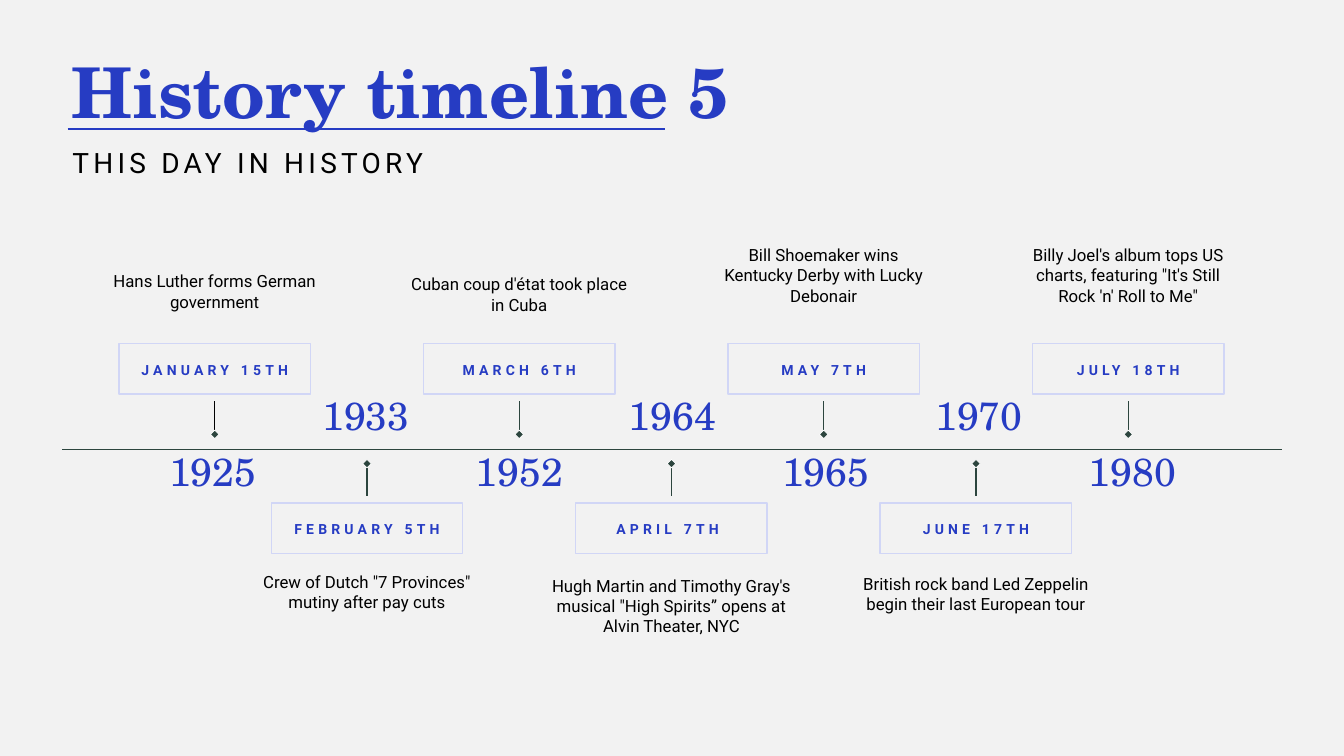
from pptx import Presentation
from pptx.dml.color import RGBColor
from pptx.enum.shapes import MSO_CONNECTOR as CONNECTOR, MSO_SHAPE as SHAPE
from pptx.enum.text import MSO_ANCHOR as ANCHOR, MSO_AUTO_SIZE as AUTO_SIZE, PP_ALIGN as ALIGN
from pptx.oxml.ns import qn
from pptx.util import Inches, Pt
from lxml import etree

BLUE = RGBColor(0x26, 0x3C, 0xC3)
PALE_BLUE = RGBColor(0xD1, 0xD6, 0xF6)
GREEN = RGBColor(0x2C, 0x45, 0x3E)
BLACK = RGBColor(0, 0, 0)
WHITE = RGBColor(0xFF, 0xFF, 0xFF)
GREY = RGBColor(0xF2, 0xF2, 0xF2)
SERIF, SANS = "TeX Gyre Schola", "Roboto"

TITLE = "History timeline 5"
SUBTITLE = "THIS DAY IN HISTORY"
EVENTS = [
    ("1925", "JANUARY 15TH", "Hans Luther forms German government", 2.57, 0.75),
    ("1933", "FEBRUARY 5TH", "Crew of Dutch \"7 Provinces\" mutiny after pay cuts", 5.55, 0.75),
    ("1952", "MARCH 6TH", "Cuban coup d'état took place in Cuba", 2.6, 0.75),
    ("1964", "APRIL 7TH ", "Hugh Martin and Timothy Gray's musical \"High Spirits” opens at Alvin Theater, NYC", 5.59, 0.99),
    ("1965", "MAY 7TH", "Bill Shoemaker wins Kentucky Derby with Lucky Debonair", 2.31, 0.99),
    ("1970", "JUNE 17TH", "British rock band Led Zeppelin begin their last European tour", 5.57, 0.75),
    ("1980", "JULY 18TH", "Billy Joel's album tops US charts, featuring \"It's Still Rock 'n' Roll to Me\"", 2.31, 0.99),
]
ABOVE = dict(date=3.41, stem=3.98, marker=4.28, year=4.44, width=2.4)
BELOW = dict(date=4.99, stem=4.62, marker=4.57, year=3.89, width=2.66)
FIRST_CENTER, EVENT_STEP = 2.13, 1.51
FIRST_YEAR_CENTER, YEAR_STEP = 2.11, 1.52
DATE_WIDTH, DATE_HEIGHT = 1.9, 0.5
STEM_LENGTH, MARKER_SIZE = 0.3, 0.06
YEAR_WIDTH, YEAR_HEIGHT = 1.2, 0.6


def write(shape, text, size, color, font=SANS, bold=False, tracking=0, align=ALIGN.CENTER,
          spacing=1.0, anchor=ANCHOR.TOP, insets=(0.1, 0.05, 0.1, 0.05)):
    frame = shape.text_frame
    frame.word_wrap = True
    frame.auto_size = AUTO_SIZE.NONE
    frame.vertical_anchor = anchor
    frame.margin_left, frame.margin_top, frame.margin_right, frame.margin_bottom = map(Inches, insets)
    para = frame.paragraphs[0]
    para.alignment = align
    para.line_spacing = spacing
    para.space_before = Pt(0)
    span = para.add_run()
    span.text = text
    span.font.size = Pt(size)
    span.font.name = font
    span.font.bold = bold
    span.font.color.rgb = color
    if tracking:
        span.font._element.set("spc", str(tracking * 100))


def add_text(page, left, top, width, height, text, size, color, **style):
    box = page.shapes.add_textbox(Inches(left), Inches(top), Inches(width), Inches(height))
    write(box, text, size, color, **style)


def add_line(page, x1, y1, x2, y2, color):
    line = page.shapes.add_connector(CONNECTOR.STRAIGHT, Inches(x1), Inches(y1), Inches(x2), Inches(y2))
    line.line.color.rgb = color
    line.line.width = Pt(1)
    etree.SubElement(line._element.spPr, qn("a:effectLst"))


def add_rectangle(page, left, top, width, height, outline, weight):
    box = page.shapes.add_shape(SHAPE.RECTANGLE, Inches(left), Inches(top), Inches(width), Inches(height))
    box.shadow.inherit = False
    box.fill.background()
    box.line.color.rgb = outline
    box.line.width = Pt(weight)
    return box


def add_event(page, index, year, date, caption, caption_top, caption_height):
    side = BELOW if index % 2 else ABOVE
    center = FIRST_CENTER + index * EVENT_STEP
    date_box = add_rectangle(page, center - DATE_WIDTH / 2, side["date"], DATE_WIDTH, DATE_HEIGHT, PALE_BLUE, 1)
    write(date_box, date, 10, BLUE, bold=True, tracking=3, spacing=1.1,
          anchor=ANCHOR.MIDDLE, insets=(0.06, 0, 0.06, 0))
    add_text(page, center - side["width"] / 2, caption_top, side["width"], caption_height,
             caption, 12, BLACK, insets=(0.12,) * 4)
    add_line(page, center, side["stem"], center, side["stem"] + STEM_LENGTH, GREEN if index else BLACK)
    marker = add_rectangle(page, center - MARKER_SIZE / 2, side["marker"], MARKER_SIZE, MARKER_SIZE, WHITE, 0.5)
    marker.rotation = 45
    marker.fill.solid()
    marker.fill.fore_color.rgb = GREEN
    year_center = FIRST_YEAR_CENTER + index * YEAR_STEP
    add_text(page, year_center - YEAR_WIDTH / 2, side["year"], YEAR_WIDTH, YEAR_HEIGHT,
             year, 28, BLUE, font=SERIF, spacing=0.9)


def main():
    deck = Presentation()
    deck.slide_width, deck.slide_height = Inches(13.33), Inches(7.5)
    page = deck.slides.add_slide(deck.slide_layouts[5])
    page.background.fill.solid()
    page.background.fill.fore_color.rgb = GREY

    title = page.shapes.title
    title.left, title.top, title.width, title.height = map(Inches, (0.61, 0.39, 12.1, 1.03))
    write(title, TITLE, 50, BLUE, font=SERIF, bold=True, align=ALIGN.LEFT, spacing=0.9,
          anchor=ANCHOR.MIDDLE, insets=(0.1, 0.1, 0.1, 0))
    add_line(page, 0.67, 1.28, 6.6, 1.28, BLUE)
    add_text(page, 0.62, 1.43, 12.1, 0.48, SUBTITLE, 20, BLACK, tracking=3, align=ALIGN.LEFT, spacing=0.9)

    add_line(page, 0.62, 4.46, 12.72, 4.46, GREEN)
    for index, event in enumerate(EVENTS):
        add_event(page, index, *event)
    deck.save("out.pptx")


if __name__ == "__main__":
    main()
